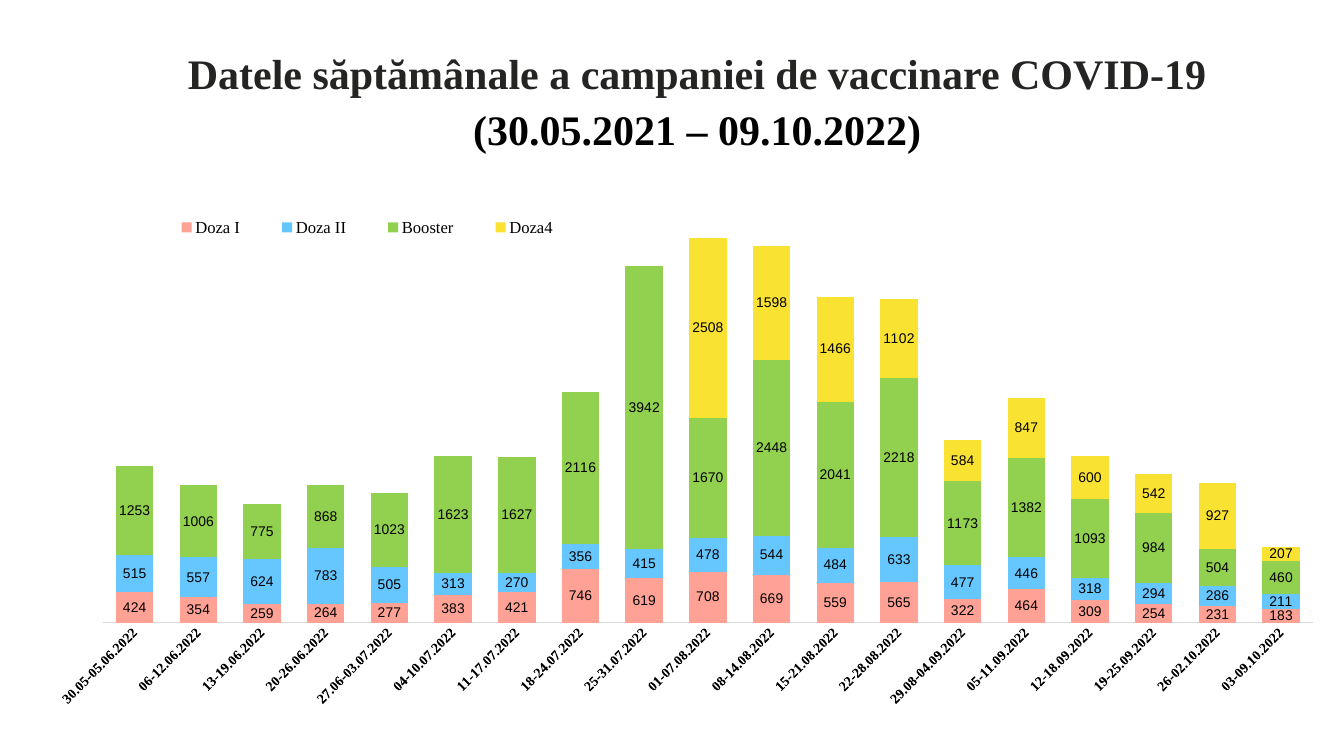
import dataclasses

import lxml.etree
import pptx
import pptx.chart.data
import pptx.dml.color
import pptx.enum.chart
import pptx.enum.text
import pptx.oxml.ns
import pptx.util
from pptx.util import Cm, Pt

qn = pptx.oxml.ns.qn


@dataclasses.dataclass(frozen=True)
class Theme:
    serif: str = "Times New Roman"
    sans: str = "Arial"
    title_size: int = 60
    legend_size: int = 24
    label_size: int = 20
    chart_size: int = 16
    heading: str = "242423"
    text: str = "000000"
    axis: str = "D9D9D9"
    series: tuple = ("FFA295", "66C7FF", "92D050", "FAE232")


TITLE_LINES = (
    "Datele săptămânale a campaniei de vaccinare COVID-19",
    "(30.05.2021 – 09.10.2022)",
)
WEEKS = (
    "30.05-05.06.2022", "06-12.06.2022", "13-19.06.2022", "20-26.06.2022",
    "27.06-03.07.2022", "04-10.07.2022", "11-17.07.2022", "18-24.07.2022",
    "25-31.07.2022", "01-07.08.2022", "08-14.08.2022", "15-21.08.2022",
    "22-28.08.2022", "29.08-04.09.2022", "05-11.09.2022", "12-18.09.2022",
    "19-25.09.2022", "26-02.10.2022", "03-09.10.2022",
)
DOSE_4 = (2508, 1598, 1466, 1102, 584, 847, 600, 542, 927, 207)
DOSES = {
    "Doza I": (424, 354, 259, 264, 277, 383, 421, 746, 619, 708,
               669, 559, 565, 322, 464, 309, 254, 231, 183),
    "Doza II": (515, 557, 624, 783, 505, 313, 270, 356, 415, 478,
                544, 484, 633, 477, 446, 318, 294, 286, 211),
    "Booster": (1253, 1006, 775, 868, 1023, 1623, 1627, 2116, 3942, 1670,
                2448, 2041, 2218, 1173, 1382, 1093, 984, 504, 460),
    "Doza4": (None,) * (len(WEEKS) - len(DOSE_4)) + DOSE_4,
}


def manual_layout(x, y, w, h, inner=False):
    """Return a c:layout element; lengths are fractions of the chart."""
    layout = lxml.etree.Element(qn("c:layout"))
    manual = lxml.etree.SubElement(layout, qn("c:manualLayout"))
    values = {"layoutTarget": "inner"} if inner else {}
    values |= {"xMode": "edge", "yMode": "edge", "x": x, "y": y, "w": w, "h": h}
    for tag, value in values.items():
        lxml.etree.SubElement(manual, qn(f"c:{tag}")).set("val", str(value))
    return layout


class Deck:
    def __init__(self, theme, width, height):
        self.theme = theme
        self.prs = pptx.Presentation()
        self.prs.slide_width, self.prs.slide_height = width, height
        self.slide = self.prs.slides.add_slide(self.prs.slide_layouts[5])

    def style(self, font, size, name, color=None, bold=False):
        font.size, font.name, font.bold = Pt(size), name, bold
        font.color.rgb = pptx.dml.color.RGBColor.from_string(color or self.theme.text)

    def title(self, lines, colors, x, y, w, h):
        sp = self.slide.shapes.title
        sp.left, sp.top, sp.width, sp.height = x, y, w, h
        tf = sp.text_frame
        tf.margin_left = tf.margin_top = tf.margin_right = tf.margin_bottom = 0
        tf.word_wrap = True
        tf.auto_size = pptx.enum.text.MSO_AUTO_SIZE.SHAPE_TO_FIT_TEXT
        tf.vertical_anchor = pptx.enum.text.MSO_ANCHOR.TOP
        for i, (line, color) in enumerate(zip(lines, colors)):
            p = tf.add_paragraph() if i else tf.paragraphs[0]
            p.alignment = pptx.enum.text.PP_ALIGN.CENTER
            p.line_spacing = Pt(80)
            r = p.add_run()
            r.text = line
            self.style(r.font, self.theme.title_size, self.theme.serif, color, True)

    def stacked_columns(self, categories, series, x, y, w, h):
        data = pptx.chart.data.CategoryChartData()
        data.categories = categories
        for name, values in series.items():
            data.add_series(name, values)
        kind = pptx.enum.chart.XL_CHART_TYPE.COLUMN_STACKED
        chart = self.slide.shapes.add_chart(kind, x, y, w, h, data).chart
        chart.has_title = False
        self.style(chart.font, self.theme.chart_size, self.theme.sans)
        self.format_plot(chart)
        self.format_axes(chart)
        self.format_legend(chart)

    def format_plot(self, chart):
        plot = chart.plots[0]
        plot.gap_width, plot.overlap = 70, 100
        plot.vary_by_categories = False
        for ser, color in zip(plot.series, self.theme.series):
            ser.format.fill.solid()
            ser.format.fill.fore_color.rgb = pptx.dml.color.RGBColor.from_string(color)
            labels = ser.data_labels
            labels.show_value = True
            labels.position = pptx.enum.chart.XL_LABEL_POSITION.CENTER
            self.style(labels.font, self.theme.label_size, self.theme.sans)
        area = next(chart._chartSpace.iter(qn("c:plotArea")))
        for old in area.findall(qn("c:layout")):
            area.remove(old)
        area.insert(0, manual_layout(0.033, 0.017, 0.975, 0.811, inner=True))

    def format_axes(self, chart):
        axis = chart.category_axis
        axis.major_tick_mark = pptx.enum.chart.XL_TICK_MARK.NONE
        axis.format.line.color.rgb = pptx.dml.color.RGBColor.from_string(self.theme.axis)
        axis.format.line.width = Pt(0.75)
        self.style(axis.tick_labels.font, self.theme.label_size, self.theme.serif, bold=True)
        next(axis._element.iter(qn("a:bodyPr"))).set("rot", str(-45 * 60000))
        chart.value_axis.visible = False
        chart.value_axis.has_major_gridlines = False
        chart.value_axis.minimum_scale = 0
        chart.value_axis.maximum_scale = 6000

    def format_legend(self, chart):
        chart.has_legend = True
        legend = chart.legend
        legend.position = pptx.enum.chart.XL_LEGEND_POSITION.BOTTOM
        legend.include_in_layout = False
        self.style(legend.font, self.theme.legend_size, self.theme.serif)
        for old in legend._element.findall(qn("c:layout")):
            legend._element.remove(old)
        position = legend._element.find(qn("c:legendPos"))
        position.addnext(manual_layout(0.059, 0.057, 0.358, 0.05))


def main():
    theme = Theme()
    deck = Deck(theme, Cm(67.74), Cm(38.1))
    deck.title(TITLE_LINES, (theme.heading, theme.text),
               Cm(4.8), Cm(2.13), Cm(60.68), Cm(5.69))
    deck.stacked_columns(WEEKS, DOSES, Cm(2.97), Cm(9.27), Cm(63.22), Cm(26.7))
    deck.prs.save("out.pptx")


if __name__ == "__main__":
    main()
